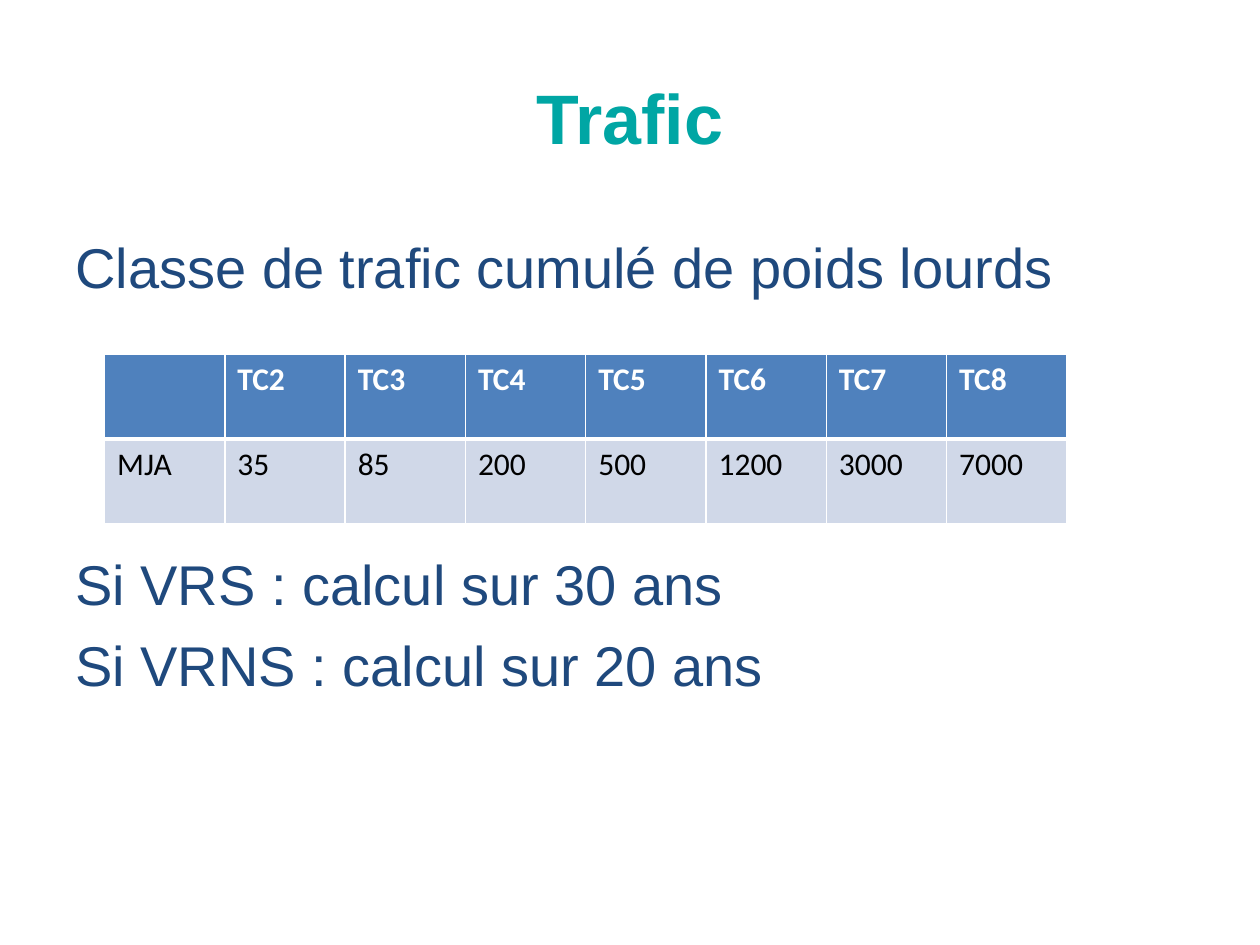
import lxml.etree
import pptx
import pptx.dml.color
import pptx.enum.text
import pptx.oxml.ns
import pptx.util

WIDTH, HEIGHT = 10, 7.5
COLOURS = {
    "title": "00A6A4",
    "body": "1F497D",
    "header": "4F81BD",
    "row": "D0D8E8",
    "white": "FFFFFF",
    "black": "000000",
}
TRAFFIC = [
    ["", "TC2", "TC3", "TC4", "TC5", "TC6", "TC7", "TC8"],
    ["MJA", "35", "85", "200", "500", "1200", "3000", "7000"],
]
STATEMENTS = [
    ("Classe de trafic cumulé de poids lourds", 0),
    ("Si VRS : calcul sur 30 ans", 142.5),
    ("Si VRNS : calcul sur 20 ans", 7.8),
]


def colour(name):
    return pptx.dml.color.RGBColor.from_string(COLOURS[name])


def set_font(para, name, size, colour_name, bold=False):
    para.font.name = name
    para.font.size = pptx.util.Pt(size)
    para.font.color.rgb = colour(colour_name)
    para.font.bold = bold


def share(left, top, width, height):
    return [pptx.util.Inches(length) for length in
            (left * WIDTH, top * HEIGHT, width * WIDTH, height * HEIGHT)]


def add_title(page, text):
    title = page.shapes.title
    title.left, title.top, title.width, title.height = share(0.05, 0.04, 0.9, 1 / 6)
    title.text_frame.text = text
    title.text_frame.vertical_anchor = pptx.enum.text.MSO_ANCHOR.MIDDLE
    para = title.text_frame.paragraphs[0]
    para.alignment = pptx.enum.text.PP_ALIGN.CENTER
    set_font(para, "Arial", 40, "title", True)


def add_statements(page, statements):
    frame = page.shapes.add_textbox(*share(0.05, 0.233, 0.9, 0.66)).text_frame
    frame.word_wrap = True
    frame.margin_top = pptx.util.Inches(0.1)
    for index, (text, gap) in enumerate(statements):
        para = frame.add_paragraph() if index else frame.paragraphs[0]
        para.text = text
        para.space_before = pptx.util.Pt(gap)
        set_font(para, "Arial", 32, "body")


def add_border(properties, side, points):
    line = lxml.etree.Element(pptx.oxml.ns.qn("a:" + side), w=str(pptx.util.Pt(points)))
    fill = lxml.etree.SubElement(line, pptx.oxml.ns.qn("a:solidFill"))
    lxml.etree.SubElement(fill, pptx.oxml.ns.qn("a:srgbClr"), val=COLOURS["white"])
    return properties.append(line)


def format_cell(cell, text, is_header):
    cell.text = text
    set_font(cell.text_frame.paragraphs[0], "Calibri", 18,
             "white" if is_header else "black", is_header)
    properties = cell._tc.get_or_add_tcPr()
    middle = 3
    widths = {"lnL": 1, "lnR": 1,
              "lnT": 1 if is_header else middle,
              "lnB": middle if is_header else 1}
    for side, points in widths.items():
        add_border(properties, side, points)
    cell.fill.solid()
    cell.fill.fore_color.rgb = colour("header" if is_header else "row")


def add_traffic_table(page, rows):
    area = share(0.083, 0.375, 0.764, 0.179)
    table = page.shapes.add_table(len(rows), len(rows[0]), *area).table
    for row_index, row in enumerate(rows):
        for column_index, text in enumerate(row):
            format_cell(table.cell(row_index, column_index), text, row_index == 0)


def main():
    deck = pptx.Presentation()
    deck.slide_width = pptx.util.Inches(WIDTH)
    deck.slide_height = pptx.util.Inches(HEIGHT)
    page = deck.slides.add_slide(deck.slide_layouts[5])
    add_title(page, "Trafic")
    add_statements(page, STATEMENTS)
    add_traffic_table(page, TRAFFIC)
    deck.save("out.pptx")


if __name__ == "__main__":
    main()
